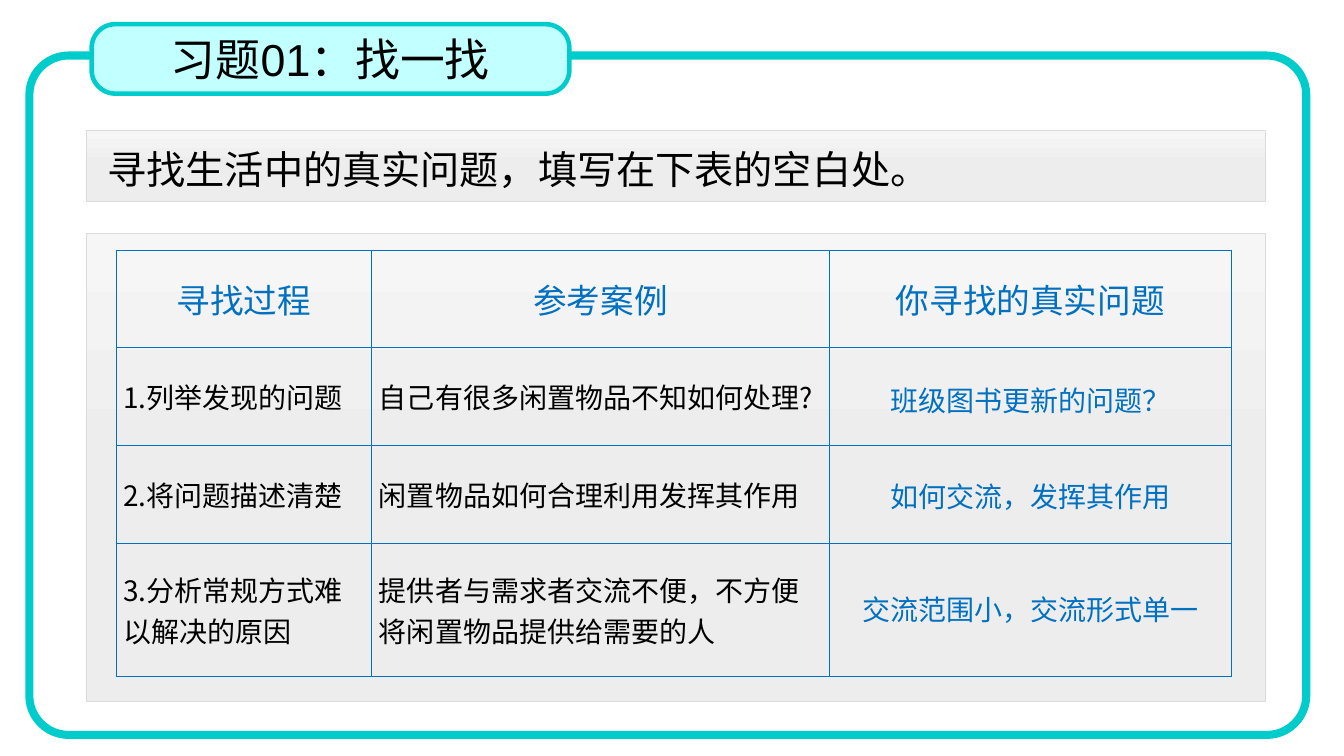
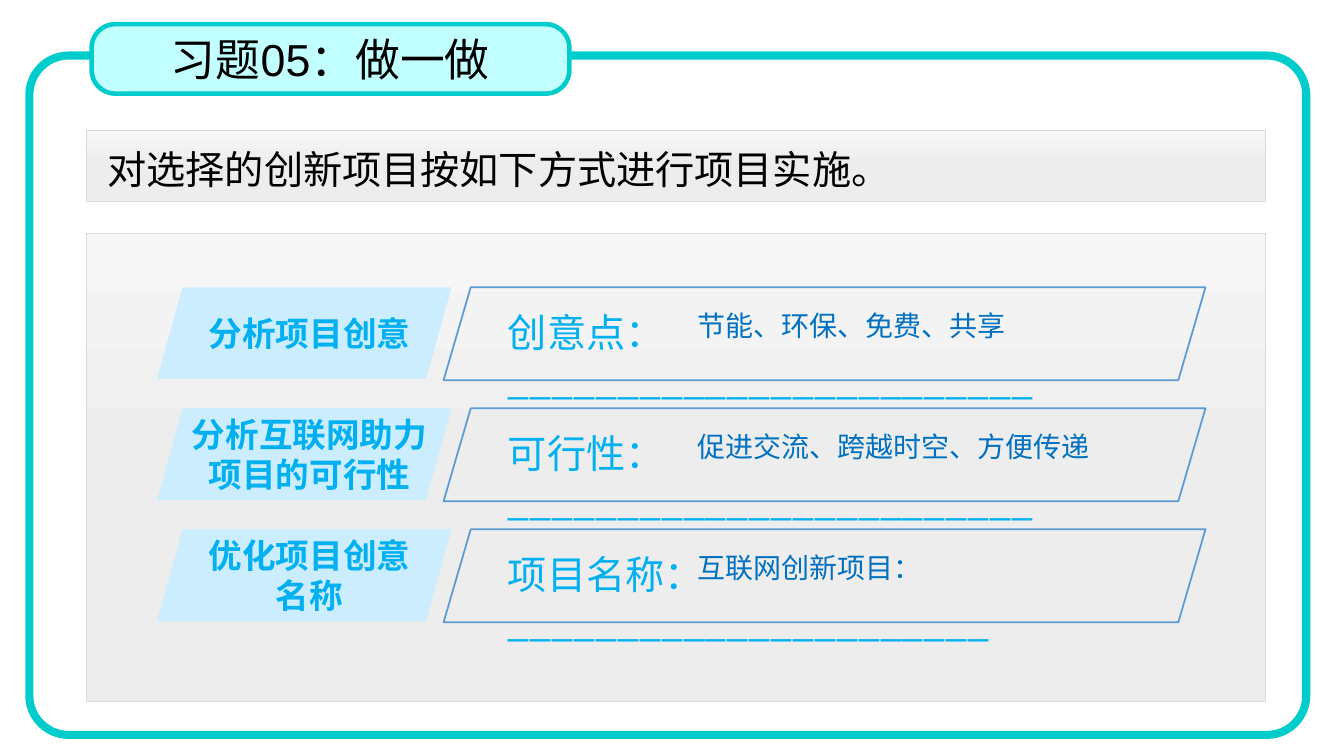
import copy
from dataclasses import dataclass

import pptx
import pptx.dml.color
import pptx.enum.shapes
import pptx.enum.text
import pptx.oxml
import pptx.oxml.ns
import pptx.util
from lxml import etree

Cm = pptx.util.Cm
Pt = pptx.util.Pt
qn = pptx.oxml.ns.qn
Shape = pptx.enum.shapes.MSO_SHAPE
Align = pptx.enum.text.PP_ALIGN
Anchor = pptx.enum.text.MSO_ANCHOR


@dataclass(frozen=True)
class Theme:
    title_font: str = "Arial"
    body_font: str = "Noto Sans CJK SC"
    black: str = "000000"
    teal: str = "00CCCC"
    title_fill: str = "C2FFFF"
    panel_stops: tuple = ((0, "F6F6F6"), (0.5, "EDEDED"), (1, "EBEBEB"))
    panel_line: str = "DBDBDB"
    blue: str = "0070C0"
    sky: str = "00B0F0"
    label_fill: str = "CBEDFE"
    field_line: str = "5B9BD5"
    title_size: int = 32
    prompt_size: int = 28
    heading_size: int = 24
    text_size: int = 20


def rgb(value):
    return pptx.dml.color.RGBColor.from_string(value)


class Workbook:
    def __init__(self, theme):
        self.theme = theme
        self.deck = pptx.Presentation()
        self.deck.slide_width = Cm(33.87)
        self.deck.slide_height = Cm(19.05)
        self.page = None

    def start_page(self, title, prompt):
        theme = self.theme
        self.page = self.deck.slides.add_slide(self.deck.slide_layouts[6])
        self.panel(5.88, 11.79)
        self.panel(3.28, 1.8)
        self.shape(Shape.ROUNDED_RECTANGLE, (0.74, 1.4, 32.18, 17.12), 0.058,
                   line=theme.teal, weight=5.75)
        tab = self.shape(Shape.ROUNDED_RECTANGLE, (2.31, 0.61, 12.04, 1.75), 0.341,
                         fill=theme.title_fill, line=theme.teal, weight=3.25)
        tab.text_frame.vertical_anchor = Anchor.MIDDLE
        self.set_text(tab.text_frame, title, theme.title_size, theme.black,
                      align=Align.CENTER, font=theme.title_font)
        box = self.text((2.46, 2.95, 29.44, 2.06), prompt, theme.prompt_size, theme.black)
        box.text_frame.paragraphs[0].line_spacing = 1.5

    def set_text(self, frame, text, size, color, align=Align.LEFT, bold=False, font=None):
        frame.text = text
        for para in frame.paragraphs:
            para.alignment = align
            para.font.size = Pt(size)
            para.font.bold = bold
            para.font.color.rgb = rgb(color)
            para.font.name = font or self.theme.body_font
            defaults = para._p.pPr.find(qn("a:defRPr"))
            etree.SubElement(defaults, qn("a:ea"), typeface=para.font.name)

    def text(self, place, text, size, color, anchor=Anchor.TOP, **style):
        box = self.page.shapes.add_textbox(*map(Cm, place))
        box.text_frame.word_wrap = True
        box.text_frame.vertical_anchor = anchor
        self.set_text(box.text_frame, text, size, color, **style)
        return box

    def shape(self, kind, place, adjustment=None, fill=None, line=None, weight=1):
        shape = self.page.shapes.add_shape(kind, *map(Cm, place))
        shape.shadow.inherit = False
        if adjustment is not None:
            shape.adjustments[0] = adjustment
        if fill:
            shape.fill.solid()
            shape.fill.fore_color.rgb = rgb(fill)
        else:
            shape.fill.background()
        if line:
            shape.line.color.rgb = rgb(line)
            shape.line.width = Pt(weight)
        else:
            shape.line.fill.background()
        return shape

    def panel(self, top, height):
        panel = self.shape(Shape.RECTANGLE, (2.18, top, 29.72, height),
                           line=self.theme.panel_line, weight=0.5)
        panel.fill.gradient()
        panel.fill.gradient_angle = 270
        stops = panel._element.spPr.find(".//" + qn("a:gsLst"))
        stops.append(copy.deepcopy(stops[0]))
        for stop, (position, color) in zip(panel.fill.gradient_stops, self.theme.panel_stops):
            stop.position = position
            stop.color.rgb = rgb(color)

    def border(self, cell):
        properties = cell._tc.get_or_add_tcPr()
        for side in ("lnL", "lnR", "lnT", "lnB"):
            line = etree.SubElement(properties, qn("a:" + side), w=str(Pt(0.5)))
            fill = etree.SubElement(line, qn("a:solidFill"))
            etree.SubElement(fill, qn("a:srgbClr"), val=self.theme.blue)

    def table(self, left, top, widths, heights, rows):
        theme = self.theme
        frame = self.page.shapes.add_table(
            len(heights), len(widths), Cm(left), Cm(top), Cm(sum(widths)), Cm(sum(heights)))
        table = frame.table
        table.first_row = False
        table.horz_banding = False
        for column, width in zip(table.columns, widths):
            column.width = Cm(width)
        for row, height in zip(table.rows, heights):
            row.height = Cm(height)
        for row_index, texts in enumerate(rows):
            for column_index, text in enumerate(texts):
                cell = table.cell(row_index, column_index)
                self.border(cell)
                cell.fill.background()
                cell.vertical_anchor = Anchor.MIDDLE
                cell.margin_left = cell.margin_right = Cm(0.18)
                cell.margin_top = cell.margin_bottom = 0
                if row_index == 0:
                    self.set_text(cell.text_frame, text, theme.heading_size, theme.blue,
                                  align=Align.CENTER)
                else:
                    self.set_text(cell.text_frame, text, theme.text_size, theme.black)

    def answer(self, place, text, align=Align.LEFT):
        self.text(place, text, self.theme.text_size, self.theme.blue, align=align)

    def step(self, top, label, field, blanks, answer):
        theme = self.theme
        box = self.text((12.62, top + 0.43, 16.61, 1.6), field + "_" * blanks,
                        theme.prompt_size, theme.sky)
        frame = box.text_frame
        frame.margin_left = frame.margin_right = Cm(0.18)
        frame.margin_top = frame.margin_bottom = Cm(0.1)
        self.shape(Shape.PARALLELOGRAM, (11.18, top, 19.2, 2.34), 0.292,
                   line=theme.field_line, weight=1.25)
        self.shape(Shape.PARALLELOGRAM, (3.96, top, 7.42, 2.31), 0.278,
                   fill=theme.label_fill)
        self.text((4.27, top, 7.06, 2.31), label, theme.heading_size, theme.sky,
                  anchor=Anchor.MIDDLE, align=Align.CENTER, bold=True)
        self.answer((17.32, top + 0.4, 11.9, 1.12), answer)


def build_search_page(book):
    book.start_page("习题01：找一找", "寻找生活中的真实问题，填写在下表的空白处。")
    book.table(2.92, 6.3, (6.45, 11.53, 10.13), (2.46, 2.46, 2.46, 3.37), (
        ("寻找过程", "参考案例", "你寻找的真实问题"),
        ("1.列举发现的问题", "自己有很多闲置物品不知如何处理?", ""),
        ("2.将问题描述清楚", "闲置物品如何合理利用发挥其作用", ""),
        ("3.分析常规方式难以解决的原因",
         "提供者与需求者交流不便，不方便将闲置物品提供给需要的人", ""),
    ))
    answers = (
        (9.53, "班级图书更新的问题？"),
        (11.96, "如何交流，发挥其作用"),
        (14.81, "交流范围小，交流形式单一"),
    )
    for top, text in answers:
        book.answer((21.4, top, 9.14, 1.12), text, Align.CENTER)


def build_action_page(book):
    book.start_page("习题05：做一做", "对选择的创新项目按如下方式进行项目实施。")
    steps = (
        ("分析项目创意", "创意点：", 24, "节能、环保、免费、共享"),
        ("分析互联网助力项目的可行性", "可行性：", 24, "促进交流、跨越时空、方便传递"),
        ("优化项目创意\n名称", "项目名称：", 22, "互联网创新项目："),
    )
    for index, step in enumerate(steps):
        book.step(7.24 + index * 3.05, *step)


def main():
    book = Workbook(Theme())
    build_search_page(book)
    build_action_page(book)
    book.deck.save("out.pptx")


if __name__ == "__main__":
    main()
